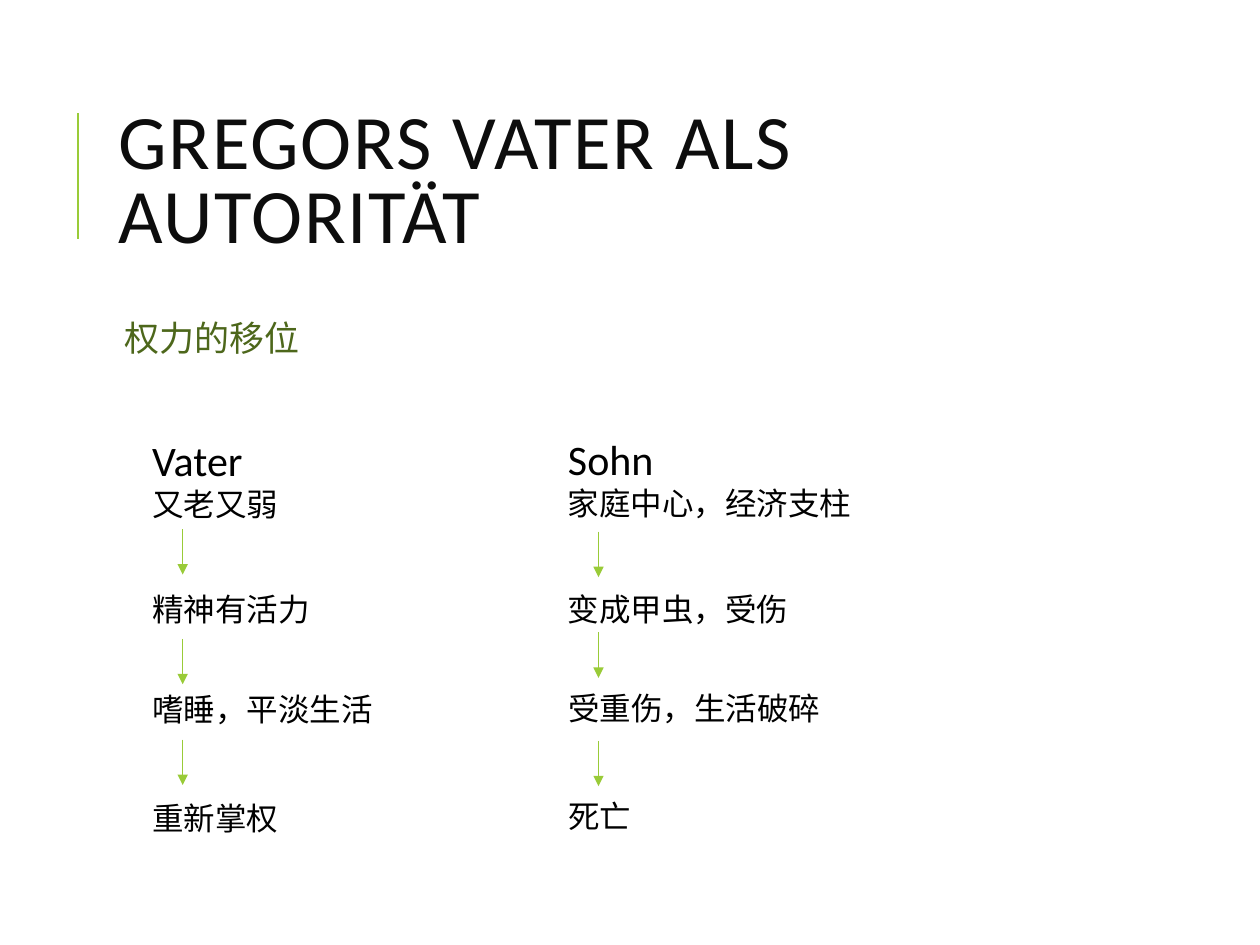
from lxml import etree
from pptx import Presentation
from pptx.dml.color import RGBColor
from pptx.enum import shapes, text
from pptx.oxml import ns
from pptx.util import Inches, Pt

FONT = "Calibri"
GREEN = RGBColor(0x99, 0xCB, 0x38)
DARK_GREEN = RGBColor(0x4D, 0x67, 0x1B)
NEAR_BLACK = RGBColor(0x0D, 0x0D, 0x0D)
BLACK = RGBColor(0, 0, 0)

ARROW_LENGTH = 0.36
ARROW_INDENT = 0.34

# Per person: left edge, stages as (top, width, lines), tops of the arrows
FATHER = (
    1.11,
    [(3.4, 1.21, ["Vater", "又老又弱"]), (4.63, 1.46, ["精神有活力"]),
     (5.43, 1.97, ["嗜睡，平淡生活"]), (6.29, 1.21, ["重新掌权"])],
    [4.2, 5.07, 5.87],
)
SON = (
    4.41,
    [(3.39, 2.47, ["Sohn", "家庭中心，经济支柱"]), (4.63, 1.97, ["变成甲虫，受伤"]),
     (5.42, 2.22, ["受重伤，生活破碎"]), (6.28, 0.71, ["死亡"])],
    [4.22, 5.02, 5.88],
)


def style(paragraph, size, color):
    paragraph.font.name = FONT
    paragraph.font.size = Pt(size)
    paragraph.font.color.rgb = color


def add_vertical_line(parent, x, top, bottom, width, arrow=False):
    line = parent.add_connector(
        shapes.MSO_CONNECTOR.STRAIGHT,
        Inches(x), Inches(top), Inches(x), Inches(bottom))
    line.line.color.rgb = GREEN
    line.line.width = Pt(width)
    if arrow:
        etree.SubElement(line.line._get_or_add_ln(), ns.qn("a:tailEnd"), type="triangle")
    etree.SubElement(line._element.spPr, ns.qn("a:effectLst"))


def add_title(slide):
    title = slide.shapes.title
    title.left, title.top = Inches(0.84), Inches(0.64)
    title.width, title.height = Inches(7.97), Inches(1.64)
    frame = title.text_frame
    frame.text = "GREGORS VATER ALS AUTORITÄT"
    frame.word_wrap = True
    frame.auto_size = text.MSO_AUTO_SIZE.NONE
    frame.vertical_anchor = text.MSO_ANCHOR.MIDDLE
    paragraph = frame.paragraphs[0]
    paragraph.alignment = text.PP_ALIGN.LEFT
    paragraph.line_spacing = 0.8
    style(paragraph, 44, NEAR_BLACK)
    paragraph.runs[0].font._element.set("spc", "100")


def add_subtitle(slide):
    box = slide.shapes.add_textbox(Inches(0.84), Inches(2.5), Inches(7.97), Inches(0.8))
    frame = box.text_frame
    frame.word_wrap = True
    frame.margin_left = Inches(0.15)
    frame.margin_top = frame.margin_right = frame.margin_bottom = Inches(0.05)
    paragraph = frame.paragraphs[0]
    paragraph.text = "权力的移位"
    paragraph.line_spacing = 0.9
    paragraph.space_before, paragraph.space_after = Pt(12), Pt(2)
    style(paragraph, 20, DARK_GREEN)


def add_stage(parent, left, top, width, lines):
    """Add one stage; its last line is the state, a line before it the person."""
    height = 0.4 if len(lines) == 1 else 0.81
    box = parent.add_textbox(Inches(left), Inches(top), Inches(width), Inches(height))
    frame = box.text_frame
    frame.word_wrap = False
    frame.auto_size = text.MSO_AUTO_SIZE.SHAPE_TO_FIT_TEXT
    frame.text = "\n".join(lines)
    for paragraph in frame.paragraphs:
        style(paragraph, 24, BLACK)
    style(frame.paragraphs[-1], 18, BLACK)


def add_development(slide, left, stages, arrow_tops):
    group = slide.shapes.add_group_shape().shapes
    for top, width, lines in stages:
        add_stage(group, left, top, width, lines)
    for top in arrow_tops:
        add_vertical_line(group, left + ARROW_INDENT, top, top + ARROW_LENGTH, 0.75, arrow=True)


def main():
    prs = Presentation()
    prs.slide_width, prs.slide_height = Inches(10), Inches(7.5)
    slide = prs.slides.add_slide(prs.slide_layouts[5])
    add_vertical_line(slide.shapes, 0.62, 0.9, 1.9, 1.5)
    add_title(slide)
    add_subtitle(slide)
    for person in (FATHER, SON):
        add_development(slide, *person)
    prs.save("out.pptx")


if __name__ == "__main__":
    main()
